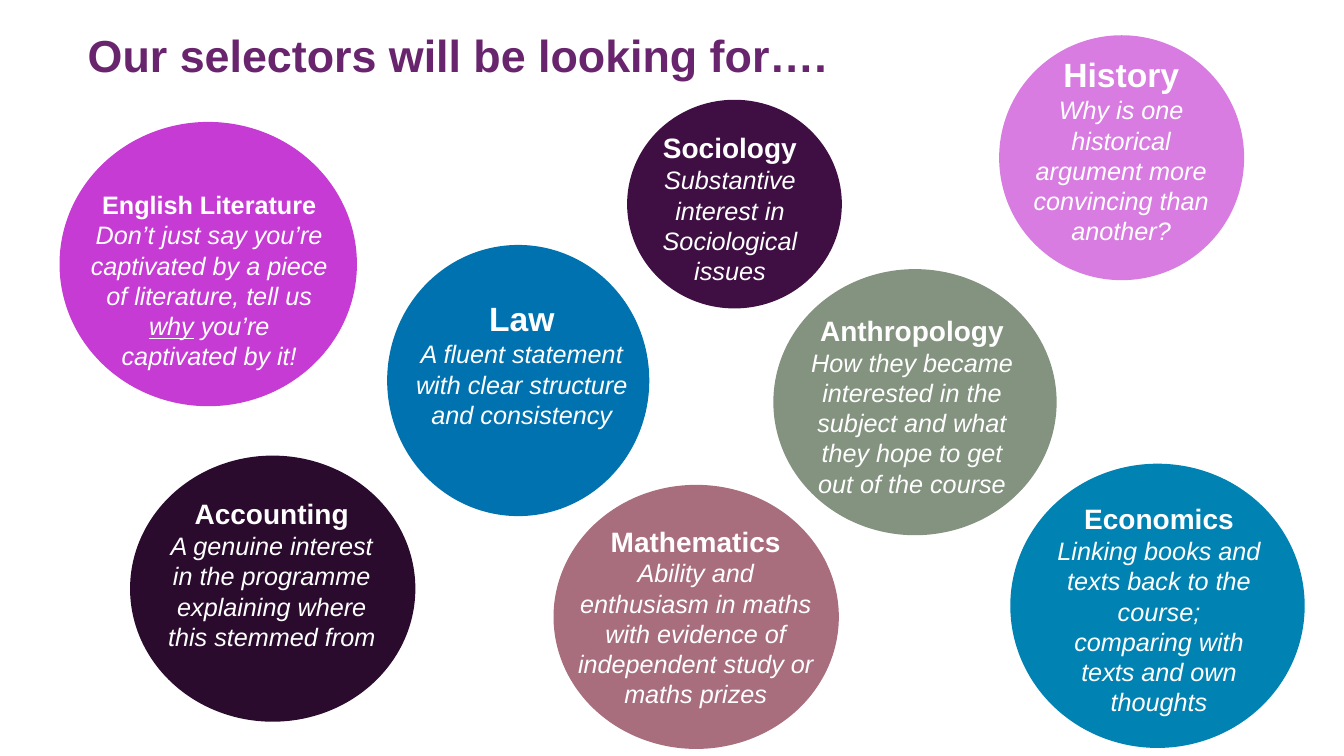
from pptx import Presentation
from pptx.dml.color import RGBColor
from pptx.enum import shapes, text
from pptx.util import Inches, Pt

FONT = "Arial"
WHITE = RGBColor(0xFF, 0xFF, 0xFF)
PURPLE = RGBColor(0x68, 0x24, 0x6D)
MAGENTA = RGBColor(0xC6, 0x3B, 0xD3)
NIGHT = RGBColor(0x2A, 0x0A, 0x2D)
BLUE = RGBColor(0x00, 0x72, 0xB0)
PLUM = RGBColor(0x3F, 0x0F, 0x44)
TEAL = RGBColor(0x00, 0x83, 0xB3)
PINK = RGBColor(0xD9, 0x7C, 0xE2)
ROSE = RGBColor(0xA8, 0x6E, 0x7D)
SAGE = RGBColor(0x83, 0x93, 0x7F)

TITLE = "Our selectors will be looking for…."
UNDER = "why"

# subject, heading size, advice, colour, circle box, text box
SUBJECTS = [
    ("English Literature", 18,
     ["Don’t just say you’re captivated by a piece of literature, tell us ",
      UNDER, " you’re captivated by it!"],
     MAGENTA, (0.59, 1.21, 2.95, 2.82), (0.8, 1.83, 2.55, 2.22)),
    ("Accounting", 20,
     ["A genuine interest in the programme explaining where this stemmed from"],
     NIGHT, (1.29, 4.52, 2.83, 2.64), (1.55, 4.88, 2.29, 1.99)),
    ("Law", 24,
     ["A fluent statement with clear structure and consistency"],
     BLUE, (3.84, 2.43, 2.6, 2.69), (4, 2.91, 2.35, 1.41)),
    ("Sociology", 20,
     ["Substantive interest in Sociological issues"],
     PLUM, (6.22, 0.99, 2.13, 2.07), (6.24, 1.25, 2, 1.99)),
    ("Economics", 20,
     ["Linking books and texts back to the course; comparing with texts "
      "and own thoughts"],
     TEAL, (10.02, 4.6, 2.92, 2.82), (10.37, 4.93, 2.25, 2.59)),
    ("History", 24,
     ["Why is one historical argument more convincing than another?"],
     PINK, (9.91, 0.35, 2.43, 2.43), (10.12, 0.49, 2, 2.42)),
    ("Mathematics", 20,
     ["Ability and enthusiasm in maths with evidence of independent study "
      "or maths prizes"],
     ROSE, (5.49, 4.81, 2.83, 2.62), (5.59, 5.15, 2.62, 1.95)),
    ("Anthropology", 20,
     ["How they became interested in the subject and what they hope to get "
      "out of the course"],
     SAGE, (7.67, 2.67, 2.81, 2.64), (7.9, 3.06, 2.29, 1.95)),
]


def inches(box):
    return [Inches(n) for n in box]


def style(para, size, color, bold=False, italic=False):
    font = para.font
    font.name, font.size, font.color.rgb = FONT, Pt(size), color
    font.bold, font.italic = bold, italic


def add_title(slide):
    title = slide.shapes.title
    title.left, title.top, title.width, title.height = inches(
        (0.77, 0.22, 8.08, 0.64))
    frame = title.text_frame
    frame.text = TITLE
    frame.auto_size = text.MSO_AUTO_SIZE.NONE
    frame.vertical_anchor = text.MSO_ANCHOR.TOP
    para = frame.paragraphs[0]
    para.alignment = text.PP_ALIGN.LEFT
    style(para, 32, PURPLE, bold=True)


def add_circle(slide, color, box):
    circle = slide.shapes.add_shape(shapes.MSO_SHAPE.OVAL, *inches(box))
    circle.shadow.inherit = False
    circle.fill.solid()
    circle.fill.fore_color.rgb = color
    circle.line.fill.background()


def add_advice(slide, name, size, parts, box):
    frame = slide.shapes.add_textbox(*inches(box)).text_frame
    frame.word_wrap = True
    head, body = frame.paragraphs[0], frame.add_paragraph()
    head.text = name
    for part in parts:
        run = body.add_run()
        run.text = part
        if part == UNDER:
            run.font.underline = True
    style(head, size, WHITE, bold=True)
    style(body, 18, WHITE, italic=True)
    for para in (head, body):
        para.alignment = text.PP_ALIGN.CENTER


def main():
    """Build the slide of subject circles and save it."""
    deck = Presentation()
    deck.slide_width, deck.slide_height = Inches(13.33), Inches(7.5)
    slide = deck.slides.add_slide(deck.slide_layouts[5])
    add_title(slide)
    for name, size, parts, color, circle, box in SUBJECTS:
        add_circle(slide, color, circle)
        add_advice(slide, name, size, parts, box)
    deck.save("out.pptx")


if __name__ == "__main__":
    main()
